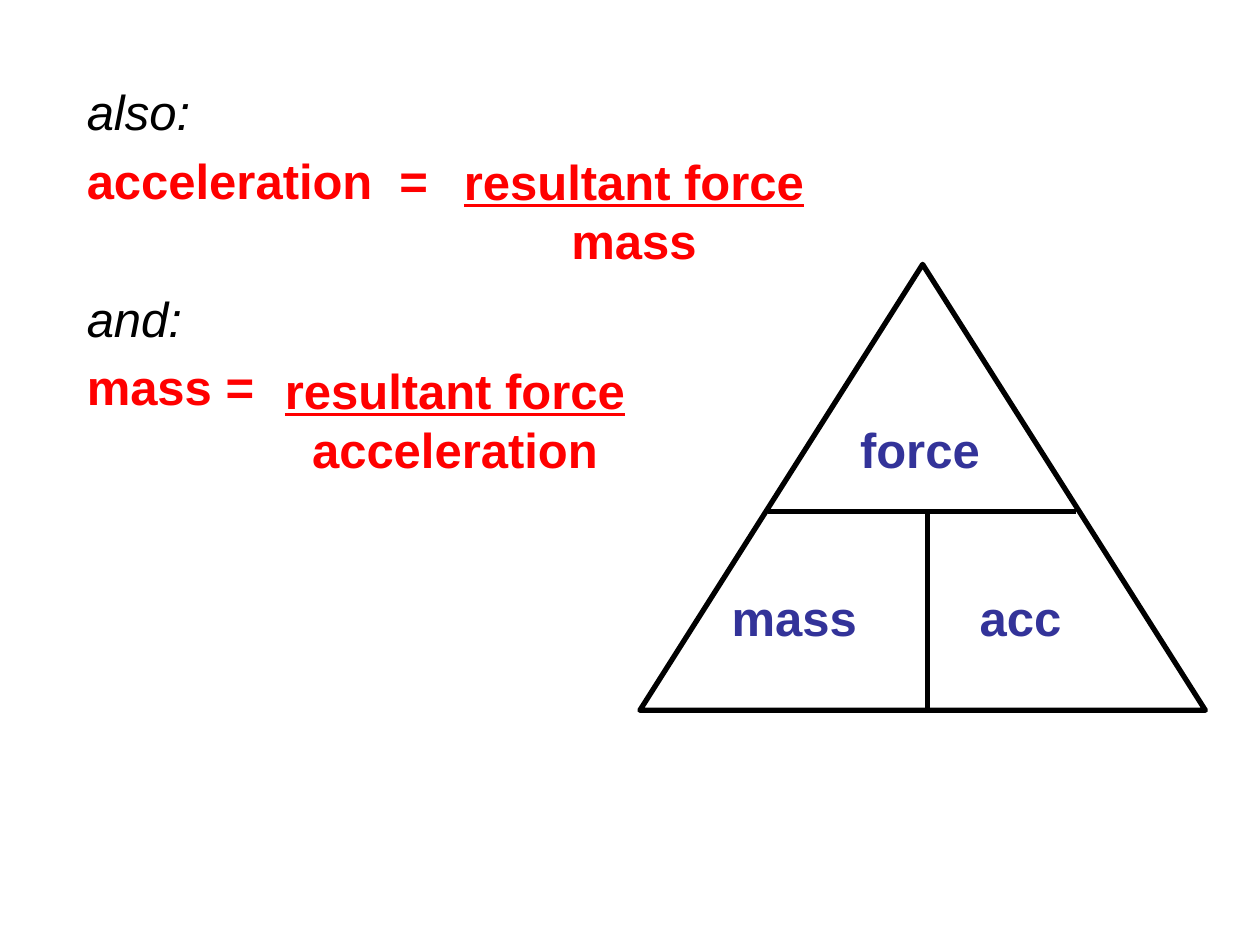
import pptx
import pptx.dml.color
import pptx.enum.shapes
import pptx.enum.text
import pptx.oxml.ns
import pptx.util
from lxml import etree
from pptx.util import Cm

BLACK = pptx.dml.color.RGBColor(0x00, 0x00, 0x00)
RED = pptx.dml.color.RGBColor(0xFF, 0x00, 0x00)
INDIGO = pptx.dml.color.RGBColor(0x33, 0x33, 0x99)
LINE_WIDTH = pptx.util.Pt(3)


def add_text_frame(left, top, width, height):
    """Add a wrapping text box and return its text frame."""
    frame = slide.shapes.add_textbox(Cm(left), Cm(top), Cm(width), Cm(height)).text_frame
    frame.word_wrap = True
    return frame


def write_paragraph(frame, text, color, space_before=0):
    """Fill the empty first paragraph, or append one after it."""
    paragraph = frame.add_paragraph() if frame.text else frame.paragraphs[0]
    paragraph.text = text
    paragraph.font.name = "Arial"
    paragraph.font.size = pptx.util.Pt(28)
    paragraph.font.bold = color != BLACK
    paragraph.font.italic = color == BLACK
    paragraph.font.color.rgb = color
    paragraph.line_spacing = pptx.util.Pt(33.7)
    paragraph.space_before = pptx.util.Pt(space_before)
    return paragraph


presentation = pptx.Presentation()
presentation.slide_width = Cm(25.4)
presentation.slide_height = Cm(19.05)
slide = presentation.slides.add_slide(presentation.slide_layouts[6])

# Left-hand sides of the two equations
equations = add_text_frame(1.5, 1.52, 12.6, 9.2)
for text, color, space_before in [
    ("also:", BLACK, 5.6),
    ("acceleration  =", RED, 5.6),
    ("and:", BLACK, 44.9),
    ("mass =", RED, 5.6),
]:
    write_paragraph(equations, text, color, space_before)

# Formula triangle
group = slide.shapes.add_group_shape()
triangle = group.shapes.add_shape(
    pptx.enum.shapes.MSO_SHAPE.ISOSCELES_TRIANGLE, Cm(12.9), Cm(5.33), Cm(11.4), Cm(8.99)
)
triangle.shadow.inherit = False
triangle.fill.background()
triangle.line.color.rgb = BLACK
triangle.line.width = LINE_WIDTH

for start_x, start_y, end_x, end_y in [
    (15.49, 10.31, 21.69, 10.31),
    (18.69, 10.31, 18.69, 14.32),
]:
    divider = group.shapes.add_connector(
        pptx.enum.shapes.MSO_CONNECTOR.STRAIGHT, Cm(start_x), Cm(start_y), Cm(end_x), Cm(end_y)
    )
    divider.line.color.rgb = BLACK
    divider.line.width = LINE_WIDTH
    etree.SubElement(divider._element.spPr, pptx.oxml.ns.qn("a:effectLst"))

for label, left, top, width in [
    ("mass", 14.5, 11.71, 4),
    ("acc", 19.5, 11.71, 4),
    ("force", 17.09, 8.33, 3.2),
]:
    write_paragraph(add_text_frame(left, top, width, 1.45), label, INDIGO)

# Fractions: underlined numerator over a centred denominator
for denominator, left, top in [("mass", 8.98, 2.92), ("acceleration", 5.37, 7.14)]:
    fraction = add_text_frame(left, top, 7.6, 4.42)
    for text in ("resultant force", denominator):
        paragraph = write_paragraph(fraction, text, RED)
        paragraph.alignment = pptx.enum.text.PP_ALIGN.CENTER
        paragraph.font.underline = text != denominator

presentation.save("out.pptx")
